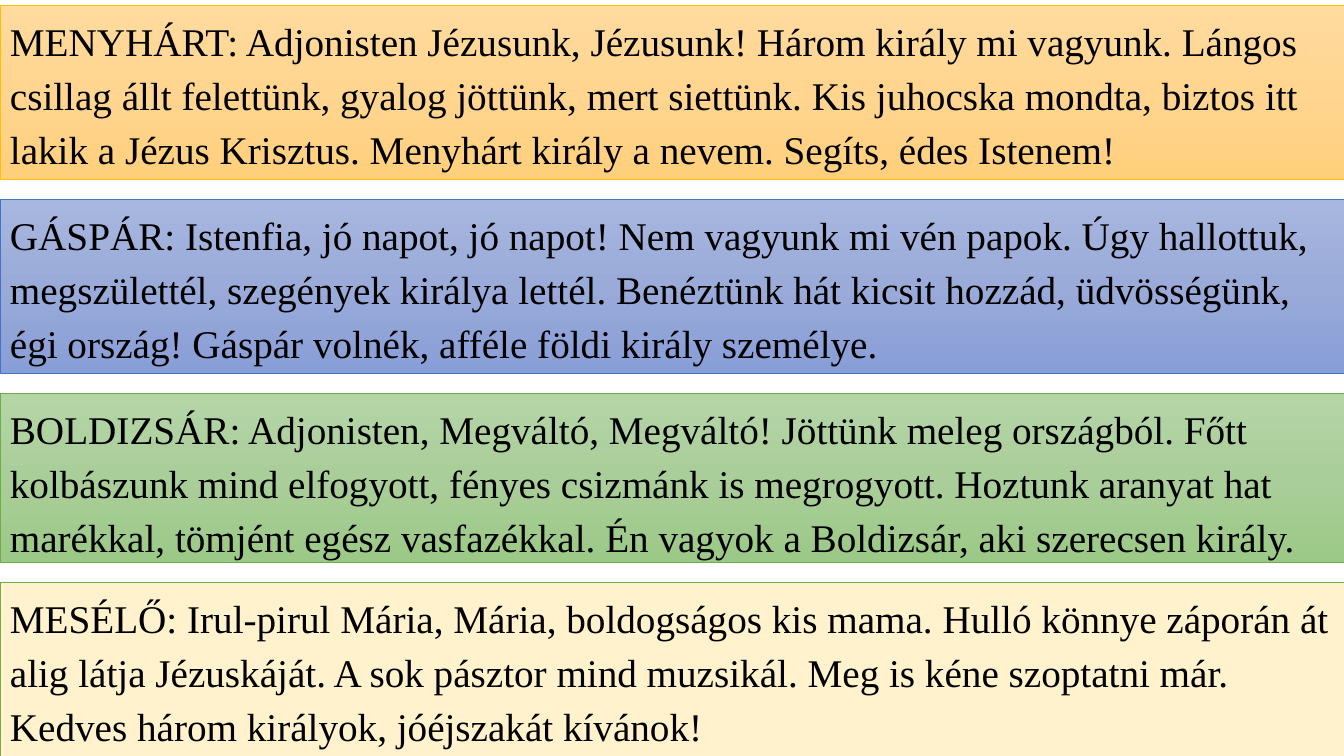
import copy
from dataclasses import dataclass

import pptx
import pptx.dml.color
import pptx.enum.shapes
import pptx.enum.text
import pptx.oxml.ns
import pptx.util

EMU_PER_PX = 914400 / 100.8
SLIDE_WIDTH, SLIDE_HEIGHT = 1344, 756


@dataclass
class Speech:
    top: int
    height: int
    fill: list[str]  # one colour, or gradient colours from top to bottom
    line: str
    text: str


SPEECHES = [
    Speech(5, 174, ["FFDB9E", "FFD590", "FFD07C"], "FFC000",
           "MENYHÁRT: Adjonisten Jézusunk, Jézusunk! Három király mi vagyunk. "
           "Lángos csillag állt felettünk, gyalog jöttünk, mert siettünk. "
           "Kis juhocska mondta, biztos itt lakik a Jézus Krisztus. "
           "Menyhárt király a nevem. Segíts, édes Istenem!"),
    Speech(199, 174, ["A8B7DF", "9AABD9", "889ED7"], "4472C4",
           "GÁSPÁR: Istenfia, jó napot, jó napot! Nem vagyunk mi vén papok. "
           "Úgy hallottuk, megszülettél, szegények királya lettél. "
           "Benéztünk hát kicsit hozzád, üdvösségünk, égi ország! "
           "Gáspár volnék, afféle földi király személye."),
    Speech(393, 169, ["B5D5A7", "AACE9A", "9CC987"], "70AD47",
           "BOLDIZSÁR: Adjonisten, Megváltó, Megváltó! Jöttünk meleg országból. "
           "Főtt kolbászunk mind elfogyott, fényes csizmánk is megrogyott. "
           "Hoztunk aranyat hat marékkal, tömjént egész vasfazékkal. "
           "Én vagyok a Boldizsár, aki szerecsen király."),
    Speech(582, 174, ["FFF2CC"], "70AD47",
           "MESÉLŐ: Irul-pirul Mária, Mária, boldogságos kis mama. "
           "Hulló könnye záporán át alig látja Jézuskáját. "
           "A sok pásztor mind muzsikál. Meg is kéne szoptatni már. "
           "Kedves három királyok, jóéjszakát kívánok!"),
]


def px(length: int) -> pptx.util.Emu:
    return pptx.util.Emu(round(length * EMU_PER_PX))


def rgb(colour: str) -> pptx.dml.color.RGBColor:
    return pptx.dml.color.RGBColor.from_string(colour)


def fill_shape(shape, colours: list[str]) -> None:
    if len(colours) == 1:
        shape.fill.solid()
        shape.fill.fore_color.rgb = rgb(colours[0])
        return
    shape.fill.gradient()
    shape.fill.gradient_angle = 270
    # A new gradient has two stops; add the ones still missing
    stop_list = shape.element.spPr.find(".//" + pptx.oxml.ns.qn("a:gsLst"))
    while len(stop_list) < len(colours):
        stop_list.append(copy.deepcopy(stop_list[0]))
    for index, (stop, colour) in enumerate(zip(shape.fill.gradient_stops, colours)):
        stop.position = index / (len(colours) - 1)
        stop.color.rgb = rgb(colour)


def write_text(shape, text: str, *, size: int = 28, font: str = "Times New Roman",
               colour: str = "000000", line_spacing: float = 1.15) -> None:
    frame = shape.text_frame
    frame.word_wrap = True
    frame.auto_size = pptx.enum.text.MSO_AUTO_SIZE.SHAPE_TO_FIT_TEXT
    frame.vertical_anchor = pptx.enum.text.MSO_ANCHOR.TOP
    paragraph = frame.paragraphs[0]
    paragraph.alignment = pptx.enum.text.PP_ALIGN.LEFT
    paragraph.line_spacing = line_spacing
    run = paragraph.add_run()
    run.text = text
    run.font.size = pptx.util.Pt(size)
    run.font.name = font
    run.font.color.rgb = rgb(colour)


def draw_speech(slide, speech: Speech) -> None:
    shape = slide.shapes.add_shape(
        pptx.enum.shapes.MSO_SHAPE.RECTANGLE,
        px(0), px(speech.top), px(SLIDE_WIDTH), px(speech.height))
    shape.shadow.inherit = False
    fill_shape(shape, speech.fill)
    shape.line.color.rgb = rgb(speech.line)
    shape.line.width = pptx.util.Pt(0.5)
    write_text(shape, speech.text)


def main() -> None:
    presentation = pptx.Presentation()
    presentation.slide_width = px(SLIDE_WIDTH)
    presentation.slide_height = px(SLIDE_HEIGHT)
    # Blank layout: the slide has no title
    slide = presentation.slides.add_slide(presentation.slide_layouts[6])
    for speech in SPEECHES:
        draw_speech(slide, speech)
    presentation.save("out.pptx")


if __name__ == "__main__":
    main()
